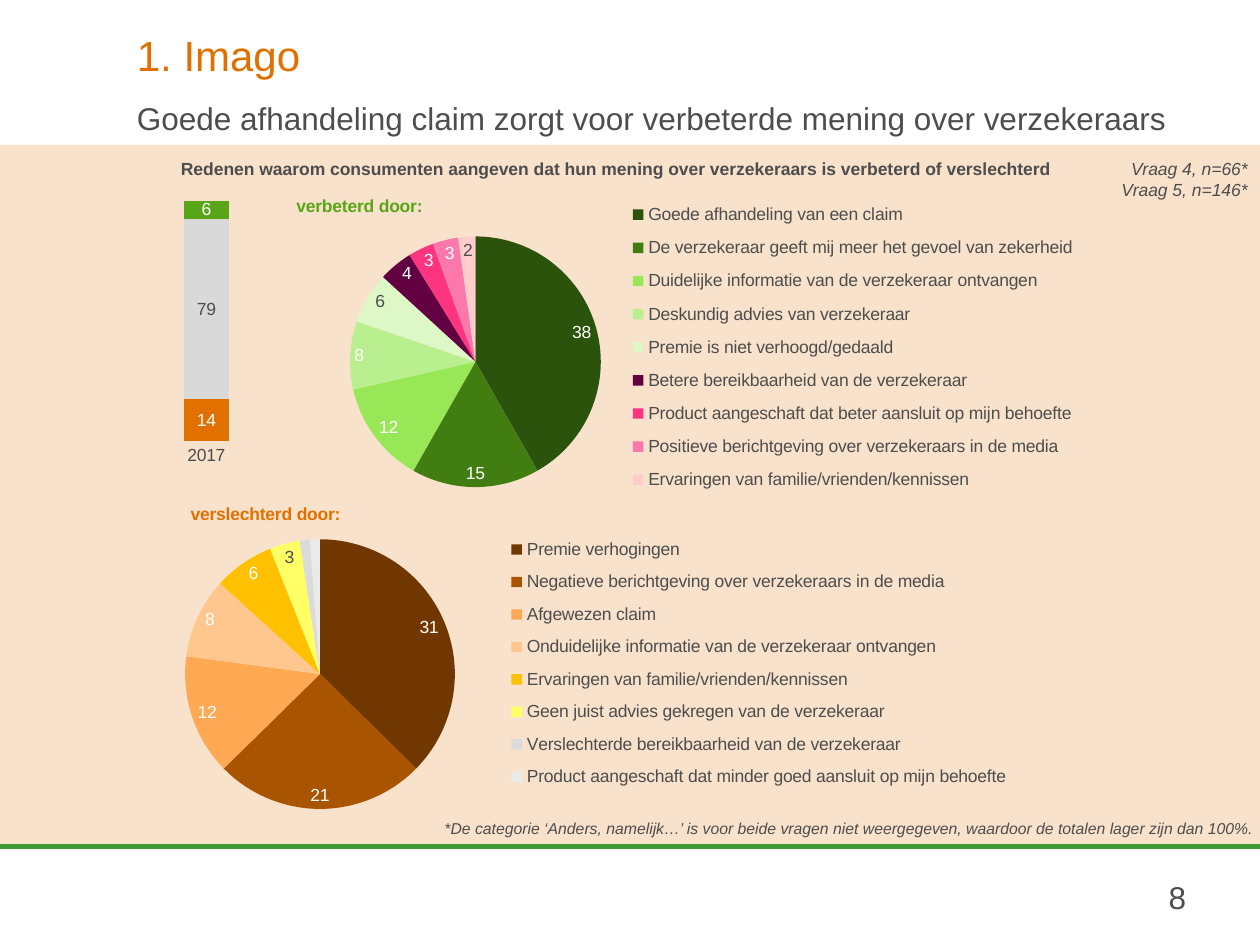
from lxml.etree import SubElement
from pptx import Presentation
from pptx.chart.data import CategoryChartData
from pptx.dml.color import RGBColor
from pptx.enum.chart import XL_CHART_TYPE, XL_LABEL_POSITION, XL_LEGEND_POSITION, XL_TICK_LABEL_POSITION, XL_TICK_MARK
from pptx.enum.shapes import MSO_CONNECTOR, MSO_SHAPE
from pptx.enum.text import MSO_ANCHOR, PP_ALIGN
from pptx.oxml.ns import qn
from pptx.util import Cm, Pt

FONT = "Arial"
TEXT = RGBColor(0x4D, 0x4D, 0x4D)
WHITE = RGBColor(0xFF, 0xFF, 0xFF)
ORANGE = RGBColor(0xE1, 0x70, 0x00)
GREEN = RGBColor(0x58, 0xA6, 0x18)
RULE = RGBColor(0x3F, 0x9C, 0x35)
GREY = RGBColor(0xD9, 0xD9, 0xD9)

IMPROVED = [
    ("Goede afhandeling van een claim", 38, RGBColor(0x2C, 0x53, 0x0C)),
    ("De verzekeraar geeft mij meer het gevoel van zekerheid", 15, RGBColor(0x42, 0x7D, 0x12)),
    ("Duidelijke informatie van de verzekeraar ontvangen", 12, RGBColor(0x98, 0xE7, 0x57)),
    ("Deskundig advies van verzekeraar", 8, RGBColor(0xBA, 0xEF, 0x8F)),
    ("Premie is niet verhoogd/gedaald", 6, RGBColor(0xDD, 0xF7, 0xC7)),
    ("Betere bereikbaarheid van de verzekeraar", 4, RGBColor(0x62, 0x00, 0x42)),
    ("Product aangeschaft dat beter aansluit op mijn behoefte", 3, RGBColor(0xFD, 0x35, 0x80)),
    ("Positieve berichtgeving over verzekeraars in de media", 3, RGBColor(0xFD, 0x78, 0xAA)),
    ("Ervaringen van familie/vrienden/kennissen", 2, RGBColor(0xFF, 0xCC, 0xCC)),
]
WORSENED = [
    ("Premie verhogingen", 31, RGBColor(0x70, 0x38, 0x00)),
    ("Negatieve berichtgeving over verzekeraars in de media", 21, RGBColor(0xA9, 0x54, 0x00)),
    ("Afgewezen claim", 12, RGBColor(0xFF, 0xA9, 0x54)),
    ("Onduidelijke informatie van de verzekeraar ontvangen", 8, RGBColor(0xFF, 0xC6, 0x8D)),
    ("Ervaringen van familie/vrienden/kennissen", 6, RGBColor(0xFF, 0xC0, 0x00)),
    ("Geen juist advies gekregen van de verzekeraar", 3, RGBColor(0xFF, 0xFF, 0x66)),
    ("Verslechterde bereikbaarheid van de verzekeraar", 1, RGBColor(0xDB, 0xDB, 0xDB)),
    ("Product aangeschaft dat minder goed aansluit op mijn behoefte", 1, RGBColor(0xEA, 0xEA, 0xEA)),
]
OPINION = [(23, "14", ORANGE, WHITE), (100, "79", GREY, TEXT), (10, "6", GREEN, WHITE)]


def style(font, size, color=TEXT, bold=False, italic=False):
    font.name, font.size, font.bold, font.italic = FONT, Pt(size), bold, italic
    font.color.rgb = color


def add_text(s, box, text, size, align=PP_ALIGN.LEFT, wrap=True, **look):
    tf = s.shapes.add_textbox(*map(Cm, box)).text_frame
    tf.word_wrap = wrap
    p = tf.paragraphs[0]
    p.alignment = align
    r = p.add_run()
    r.text = text
    style(r.font, size, **look)
    return tf


def clear_margins(tf):
    tf.margin_left = tf.margin_right = tf.margin_top = tf.margin_bottom = 0


def add_panel(s, left, top, width, height):
    line_y = Cm(top + height + 0.05)
    line = s.shapes.add_connector(MSO_CONNECTOR.STRAIGHT, Cm(left), line_y, Cm(left + width), line_y)
    line.line.color.rgb = RULE
    line.line.width = Pt(2.75)
    SubElement(line._element.spPr, qn("a:effectLst"))
    sp = s.shapes.add_shape(MSO_SHAPE.RECTANGLE, Cm(left), Cm(top), Cm(width), Cm(height))
    sp.shadow.inherit = False
    sp.fill.solid()
    sp.fill.fore_color.rgb = ORANGE
    sp.line.fill.background()
    color = sp._element.spPr.find(qn("a:solidFill"))[0]
    SubElement(color, qn("a:alpha"), val="20000")


def add_heading(s, box):
    tf = add_text(s, box, "1. Imago", 24, color=ORANGE)
    clear_margins(tf)
    tf.vertical_anchor = MSO_ANCHOR.BOTTOM
    p = tf.paragraphs[0]
    p.line_spacing = 1.5
    p.add_line_break()
    r = p.add_run()
    r.text = "Goede afhandeling claim zorgt voor verbeterde mening over verzekeraars"
    style(r.font, 18)


def set_layout(parent, index, inner=False, **place):
    for old in parent.findall(qn("c:layout")):
        parent.remove(old)
    layout = parent.makeelement(qn("c:layout"))
    parent.insert(index, layout)
    manual = SubElement(layout, qn("c:manualLayout"))
    if inner:
        SubElement(manual, qn("c:layoutTarget"), val="inner")
    for key in place:
        if key in "xy":
            SubElement(manual, qn(f"c:{key}Mode"), val="edge")
    for key, value in place.items():
        SubElement(manual, qn(f"c:{key}"), val=str(value))


def add_chart(s, box, kind, data, plot):
    chart = s.shapes.add_chart(kind, *map(Cm, box), data).chart
    style(chart.font, 9)
    area = chart._chartSpace.find(".//" + qn("c:plotArea"))
    set_layout(area, 0, True, **dict(zip("xywh", plot)))
    return chart


def add_opinion_bar(s, box):
    data = CategoryChartData()
    data.categories = ["2017"]
    for i, (value, *_) in enumerate(OPINION, 1):
        data.add_series(f"Series {i}", [value])
    chart = add_chart(s, box, XL_CHART_TYPE.COLUMN_STACKED, data, (0.05, 0.01, 0.33, 0.88))
    chart.has_title = chart.has_legend = False
    plot = chart.plots[0]
    plot.gap_width, plot.overlap, plot.vary_by_categories = 20, 100, False
    values = chart.value_axis
    values.minimum_scale, values.maximum_scale, values.major_unit = 0, 133, 66
    values.has_major_gridlines = values.visible = False
    axis = chart.category_axis
    axis.major_tick_mark = XL_TICK_MARK.NONE
    axis.tick_label_position = XL_TICK_LABEL_POSITION.NEXT_TO_AXIS
    axis.tick_labels.offset = 0
    axis.format.line.fill.background()
    style(axis.tick_labels.font, 10)
    for series, (_, label, fill, color) in zip(plot.series, OPINION):
        series.format.fill.solid()
        series.format.fill.fore_color.rgb = fill
        dl = series.points[0].data_label
        r = dl.text_frame.paragraphs[0].add_run()
        r.text = label
        style(r.font, 10, color)
        dl.position = XL_LABEL_POSITION.CENTER


def add_reasons_pie(s, box, title, color, reasons, plot, title_at, legend_at, dark, hidden=()):
    names, values, fills = zip(*reasons)
    data = CategoryChartData()
    data.categories = names
    data.add_series("Series 1", values)
    chart = add_chart(s, box, XL_CHART_TYPE.PIE, data, plot)
    chart.has_title = True
    r = chart.chart_title.text_frame.paragraphs[0].add_run()
    r.text = title
    style(r.font, 10, color, bold=True)
    chart.chart_title.include_in_layout = False
    set_layout(chart._chartSpace.find(".//" + qn("c:title")), 1, **dict(zip("xy", title_at)))
    chart.has_legend = True
    chart.legend.position = XL_LEGEND_POSITION.RIGHT
    chart.legend.include_in_layout = False
    style(chart.legend.font, 10)
    set_layout(chart.legend._element, 1, **dict(zip("xywh", legend_at)))
    chart.plots[0].vary_by_categories = True
    series = chart.plots[0].series[0]
    for i, fill in enumerate(fills):
        point = series.points[i].format
        point.fill.solid()
        point.fill.fore_color.rgb = fill
        point.line.fill.background()
    labels = series.data_labels
    labels.show_value = True
    labels.number_format, labels.number_format_is_linked = "0", False
    labels.position = XL_LABEL_POSITION.BEST_FIT
    style(labels.font, 10, WHITE)
    for i in sorted(hidden, reverse=True):
        label = labels._element.makeelement(qn("c:dLbl"))
        labels._element.insert(0, label)
        SubElement(label, qn("c:idx"), val=str(i))
        SubElement(label, qn("c:delete"), val="1")
    for i in dark:
        dl = series.points[i].data_label
        style(dl.font, 10)
        dl.position = XL_LABEL_POSITION.BEST_FIT


def main():
    prs = Presentation()
    prs.slide_width, prs.slide_height = Cm(25.4), Cm(19.05)
    s = prs.slides.add_slide(prs.slide_layouts[6])
    add_panel(s, 0, 2.92, 25.4, 14.1)
    add_heading(s, (2.76, 0.46, 23.34, 2.29))
    clear_margins(add_text(s, (21.57, 17.7, 2.34, 0.84), "8", 18, PP_ALIGN.RIGHT, wrap=False))
    add_text(s, (22.1, 3.07, 3.3, 1.12), "Vraag 4, n=66* Vraag 5, n=146*", 10, PP_ALIGN.RIGHT, italic=True)
    add_text(s, (2.18, 3.07, 20.45, 0.69),
             "Redenen waarom consumenten aangeven dat hun mening over verzekeraars is verbeterd of verslechterd",
             10, PP_ALIGN.CENTER, bold=True)
    add_opinion_bar(s, (3.45, 3.99, 3.3, 5.51))
    add_reasons_pie(s, (5.91, 3.86, 17.09, 6.48), "verbeterd door:", GREEN, IMPROVED,
                    (0.06, 0.14, 0.31, 0.78), (0, 0), (0.36, 0, 0.6, 0.97), dark=(4, 8))
    add_reasons_pie(s, (1.72, 10.06, 20.57, 6.25), "verslechterd door:", ORANGE, WORSENED,
                    (0.09, 0.13, 0.28, 0.87), (0.1, 0), (0.37, 0.09, 0.58, 0.88), dark=(5,), hidden=(6, 7))
    add_text(s, (8.71, 16.38, 17.4, 0.64),
             "*De categorie ‘Anders, namelijk…’ is voor beide vragen niet weergegeven, "
             "waardoor de totalen lager zijn dan 100%.", 9, italic=True)
    prs.save("out.pptx")


if __name__ == "__main__":
    main()
